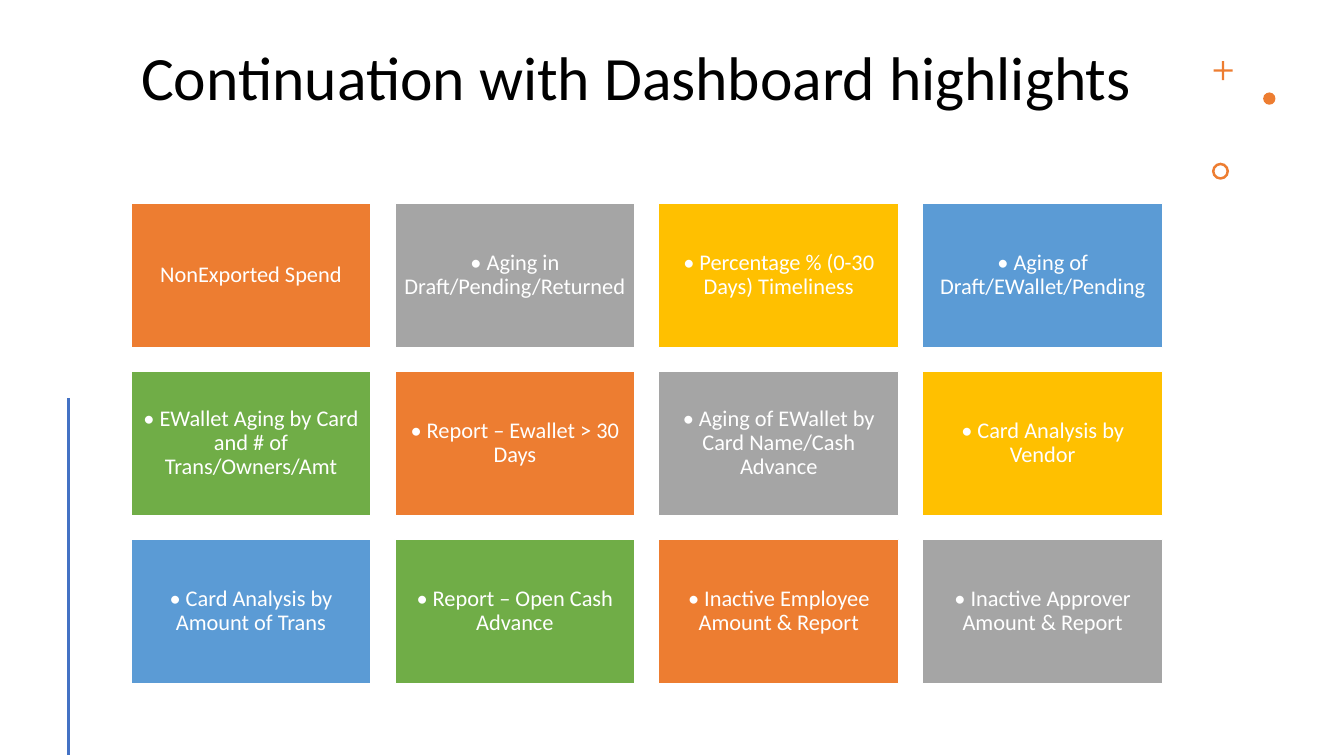
from dataclasses import dataclass

from lxml import etree
from pptx import Presentation
from pptx import util as u
from pptx.dml.color import RGBColor
from pptx.enum import shapes, text
from pptx.oxml.ns import qn


@dataclass(frozen=True)
class Theme:
    font: str = "Calibri"
    title_size: int = 44
    tile_size: int = 16
    ink: str = "000000"
    paper: str = "FFFFFF"
    accent: str = "ED7D31"
    rule: str = "4472C4"
    tiles: tuple = ("ED7D31", "A5A5A5", "FFC000", "5B9BD5", "70AD47")


class Deck:
    def __init__(self, theme):
        self.theme = theme
        self.prs = Presentation()
        self.prs.slide_width = u.Inches(13.333)
        self.prs.slide_height = u.Inches(7.5)
        self.s = None

    def add_slide(self):
        self.s = self.prs.slides.add_slide(self.prs.slide_layouts[5])

    def style(self, tf, size, color, align):
        for p in tf.paragraphs:
            p.alignment = align
            p.line_spacing = 0.9
            for r in p.runs:
                r.font.name = self.theme.font
                r.font.size = u.Pt(size)
                r.font.color.rgb = RGBColor.from_string(color)

    def title(self, words, x, y, w, h):
        sp = self.s.shapes.title
        sp.left, sp.top, sp.width, sp.height = map(u.Cm, (x, y, w, h))
        tf = sp.text_frame
        tf.text = words
        tf.word_wrap = True
        tf.auto_size = text.MSO_AUTO_SIZE.NONE
        tf.vertical_anchor = text.MSO_ANCHOR.TOP
        self.style(tf, self.theme.title_size, self.theme.ink, text.PP_ALIGN.LEFT)

    def shape(self, kind, x, y, w, h, fill):
        sp = self.s.shapes.add_shape(kind, *map(u.Cm, (x, y, w, h)))
        sp.shadow.inherit = False
        sp.fill.solid()
        sp.fill.fore_color.rgb = RGBColor.from_string(fill)
        sp.line.fill.background()
        return sp

    def ornament(self, kind, x, y, size, adjustment=None):
        sp = self.shape(kind, x, y, size, size, self.theme.accent)
        if adjustment is not None:
            sp.adjustments[0] = adjustment

    def tile(self, words, x, y, w, h, fill):
        sp = self.shape(shapes.MSO_SHAPE.RECTANGLE, x, y, w, h, fill)
        sp.line.color.rgb = RGBColor.from_string(self.theme.paper)
        sp.line.width = u.Pt(1)
        tf = sp.text_frame
        tf.text = words
        tf.word_wrap = True
        tf.vertical_anchor = text.MSO_ANCHOR.MIDDLE
        tf.margin_left = tf.margin_right = u.Cm(0.17)
        tf.margin_top = tf.margin_bottom = u.Cm(0.17)
        self.style(tf, self.theme.tile_size, self.theme.paper, text.PP_ALIGN.CENTER)

    def line(self, x1, y1, x2, y2):
        sp = self.s.shapes.add_connector(
            shapes.MSO_CONNECTOR.STRAIGHT, *map(u.Cm, (x1, y1, x2, y2)))
        sp.line.color.rgb = RGBColor.from_string(self.theme.rule)
        sp.line.width = u.Pt(2)
        etree.SubElement(sp._element.spPr, qn("a:effectLst"))


HIGHLIGHTS = [
    "NonExported Spend",
    "• Aging in Draft/Pending/Returned",
    "• Percentage % (0-30 Days) Timeliness",
    "• Aging of Draft/EWallet/Pending",
    "• EWallet Aging by Card and # of Trans/Owners/Amt",
    "• Report – Ewallet > 30 Days",
    "• Aging of EWallet by Card Name/Cash Advance",
    "• Card Analysis by Vendor",
    "• Card Analysis by Amount of Trans",
    "• Report – Open Cash Advance",
    "• Inactive Employee Amount & Report",
    "• Inactive Approver Amount & Report",
]
COLUMNS = 4
LEFT, TOP = 3.3, 5.13
TILE_W, TILE_H = 6.05, 3.63
GAP_X, GAP_Y = 0.6, 0.6


def main():
    theme = Theme()
    deck = Deck(theme)
    deck.add_slide()
    deck.title("Continuation with Dashboard highlights", LEFT, 1.07, 25.98, 3.33)
    deck.ornament(shapes.MSO_SHAPE.CROSS, 30.58, 1.54, 0.48, 0.44)
    deck.ornament(shapes.MSO_SHAPE.OVAL, 31.83, 2.33, 0.31)
    deck.ornament(shapes.MSO_SHAPE.DONUT, 30.54, 4.1, 0.43, 0.15)
    deck.line(1.73, 10.03, 1.73, 19.03)
    for i, words in enumerate(HIGHLIGHTS):
        row, column = divmod(i, COLUMNS)
        deck.tile(words, LEFT + column * (TILE_W + GAP_X), TOP + row * (TILE_H + GAP_Y),
                  TILE_W, TILE_H, theme.tiles[i % len(theme.tiles)])
    deck.prs.save("out.pptx")


if __name__ == "__main__":
    main()
